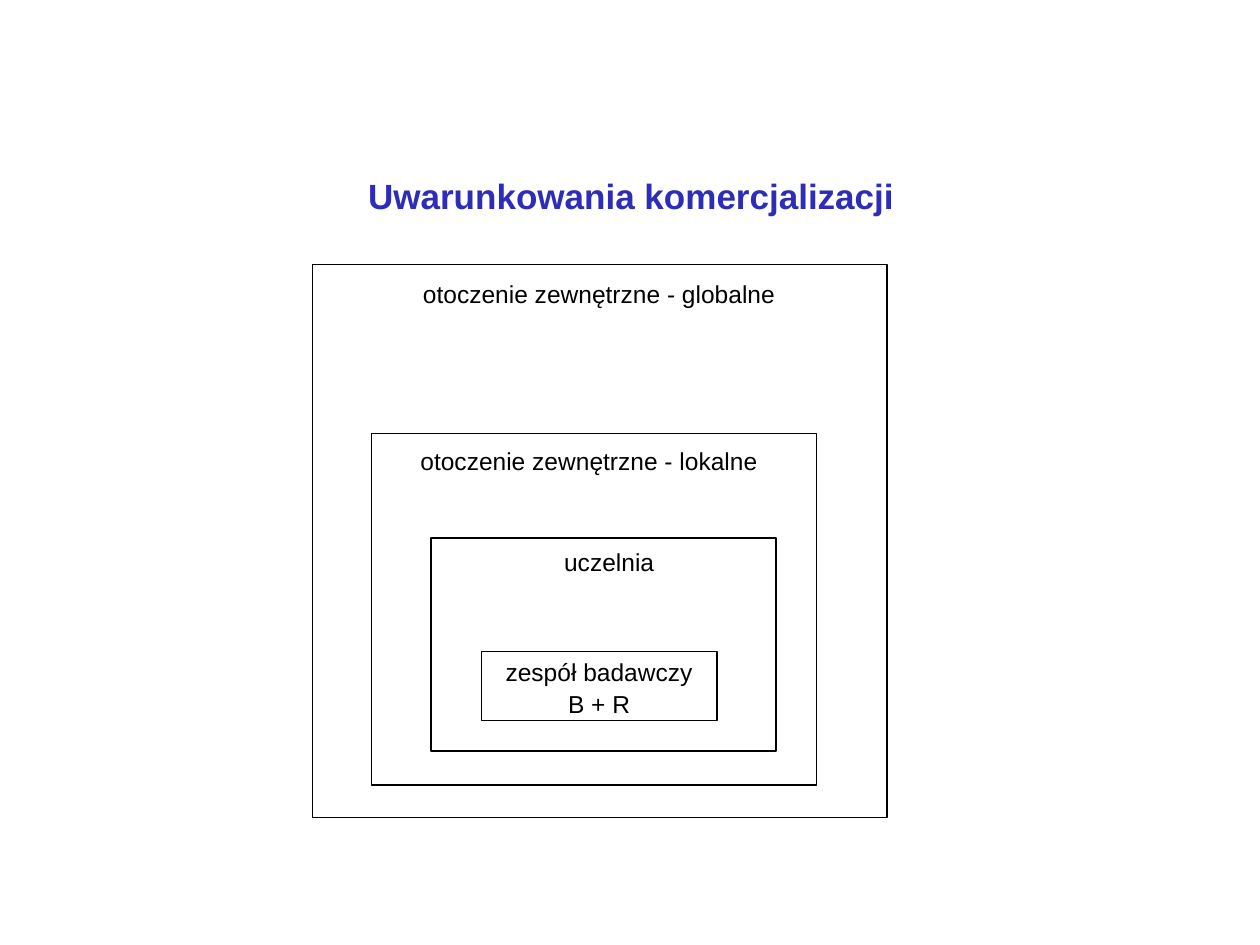
from pptx import Presentation
from pptx import util as u
from pptx.dml.color import RGBColor
from pptx.enum import shapes, text

COLOURS = {"title": "2D2DB9", "ink": "000000"}


class Sheet:
    font = "Arial"
    label_size = 14
    title_size = 20
    columns, rows = 100, 75

    def __init__(self, deck):
        self.deck = deck
        self.slide = deck.slides.add_slide(deck.slide_layouts[5])

    def area(self, left, top, width, height):
        column = self.deck.slide_width / self.columns
        row = self.deck.slide_height / self.rows
        return [int(n) for n in (left * column, top * row, width * column, height * row)]

    def set_words(self, box, lines, size, colour, bold=False, spacing=1.0):
        frame = box.text_frame
        frame.text = "\n".join(lines)
        frame.word_wrap = True
        frame.auto_size = text.MSO_AUTO_SIZE.NONE
        frame.vertical_anchor = text.MSO_ANCHOR.MIDDLE
        for para in frame.paragraphs:
            para.alignment = text.PP_ALIGN.CENTER
            para.line_spacing = spacing
            for span in para.runs:
                span.font.name = self.font
                span.font.size = u.Pt(size)
                span.font.bold = bold
                span.font.color.rgb = RGBColor.from_string(COLOURS[colour])

    def title(self, words, *place):
        box = self.slide.shapes.title
        box.left, box.top, box.width, box.height = self.area(*place)
        self.set_words(box, [words], self.title_size, "title", bold=True)
        box.text_frame.margin_bottom = u.Inches(0.11)

    def frame(self, *place, lines=()):
        box = self.slide.shapes.add_shape(shapes.MSO_SHAPE.RECTANGLE, *self.area(*place))
        box.shadow.inherit = False
        box.fill.background()
        box.line.color.rgb = RGBColor.from_string(COLOURS["ink"])
        box.line.width = u.Pt(0.75)
        if lines:
            self.set_words(box, lines, self.label_size, "ink", spacing=1.1)

    def label(self, words, *place):
        box = self.slide.shapes.add_textbox(*self.area(*place))
        self.set_words(box, [words], self.label_size, "ink")


def main():
    deck = Presentation()
    deck.slide_width, deck.slide_height = u.Inches(10), u.Inches(7.5)
    sheet = Sheet(deck)
    sheet.title("Uwarunkowania komercjalizacji", 5.1, 13.1, 90, 5.5)

    for surroundings in ((24.8, 21, 45.6, 43.9), (29.5, 34.4, 35.3, 27.9), (34.2, 42.7, 27.4, 16.9)):
        sheet.frame(*surroundings)
    sheet.frame(38.2, 51.7, 18.7, 5.5, lines=["zespół badawczy", "B + R"])

    sheet.label("uczelnia", 39, 42.6, 18.7, 4)
    sheet.label("otoczenie zewnętrzne - lokalne", 28.7, 34.6, 36.1, 4)
    sheet.label("otoczenie zewnętrzne - globalne", 29.5, 21.3, 36.1, 4)
    deck.save("out.pptx")


if __name__ == "__main__":
    main()
